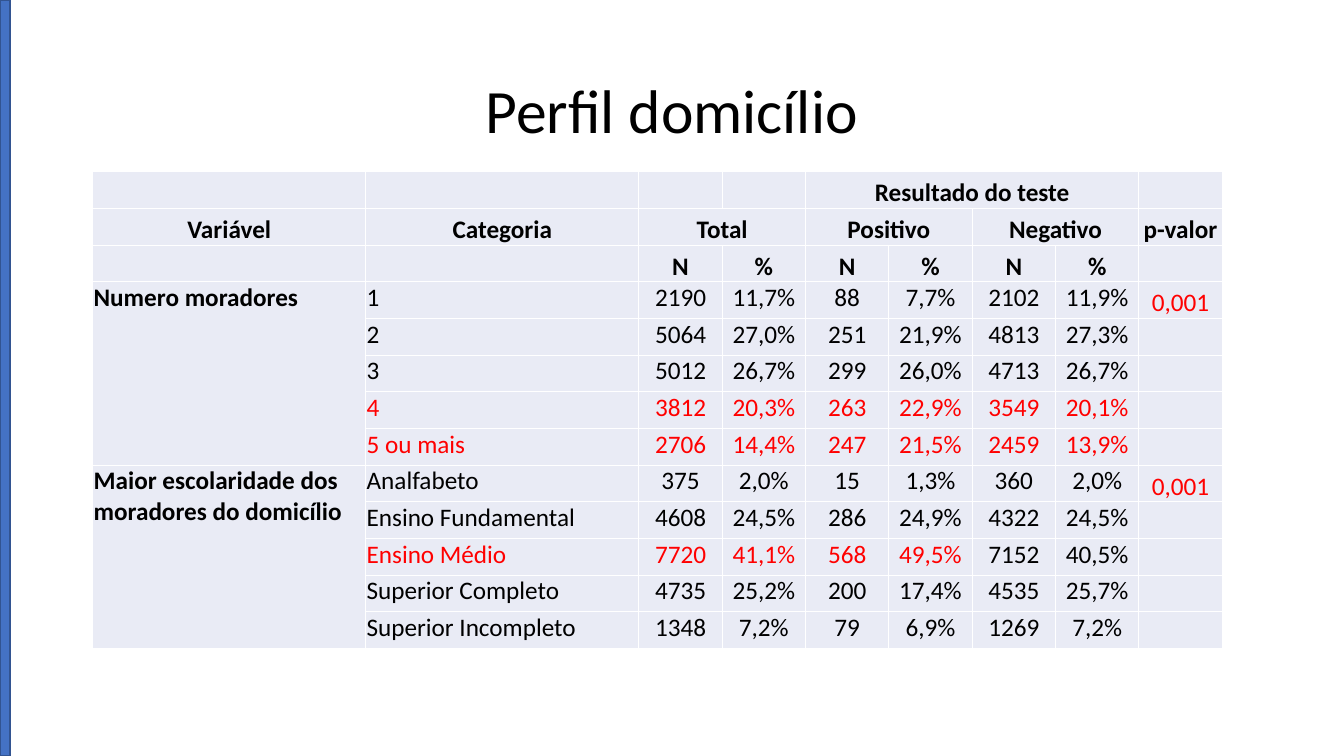
from lxml import etree
from pptx import Presentation
from pptx.dml.color import RGBColor
from pptx.enum.shapes import MSO_SHAPE
from pptx.enum.text import MSO_ANCHOR, PP_ALIGN
from pptx.oxml.ns import qn
from pptx.util import Cm, Pt

LEFT, CENTER = PP_ALIGN.LEFT, PP_ALIGN.CENTER
TOP, MIDDLE, BOTTOM = MSO_ANCHOR.TOP, MSO_ANCHOR.MIDDLE, MSO_ANCHOR.BOTTOM
BLACK = RGBColor(0x00, 0x00, 0x00)
RED = RGBColor(0xFF, 0x00, 0x00)
CELL = RGBColor(0xE9, 0xEB, 0xF5)
BLUE = RGBColor(0x44, 0x72, 0xC4)
DARK_BLUE = RGBColor(0x32, 0x54, 0x91)
FONT = "Calibri"

TITLE = "Perfil domicílio"
HEADER = [
    ["", "", "", "", "Resultado do teste", "", "", "", ""],
    ["Variável", "Categoria", "Total", "", "Positivo", "", "Negativo", "", "p-valor"],
    ["", "", "N", "%", "N", "%", "N", "%", ""],
]
# (variable, p-value, [(category, six values, how many of these seven cells are red)])
GROUPS = [
    ("Numero moradores", "0,001", [
        ("1", ["2190", "11,7%", "88", "7,7%", "2102", "11,9%"], 0),
        ("2", ["5064", "27,0%", "251", "21,9%", "4813", "27,3%"], 0),
        ("3", ["5012", "26,7%", "299", "26,0%", "4713", "26,7%"], 0),
        ("4", ["3812", "20,3%", "263", "22,9%", "3549", "20,1%"], 7),
        ("5 ou mais", ["2706", "14,4%", "247", "21,5%", "2459", "13,9%"], 7),
    ]),
    ("Maior escolaridade dos moradores do domicílio", "0,001", [
        ("Analfabeto", ["375", "2,0%", "15", "1,3%", "360", "2,0%"], 0),
        ("Ensino Fundamental", ["4608", "24,5%", "286", "24,9%", "4322", "24,5%"], 0),
        ("Ensino Médio", ["7720", "41,1%", "568", "49,5%", "7152", "40,5%"], 5),
        ("Superior Completo", ["4735", "25,2%", "200", "17,4%", "4535", "25,7%"], 0),
        ("Superior Incompleto", ["1348", "7,2%", "79", "6,9%", "1269", "7,2%"], 0),
    ]),
]
HEADER_SPANS = [(0, 4, 7), (1, 2, 3), (1, 4, 5), (1, 6, 7)]  # row, first and last column
COL_WIDTHS = [6.88] * 2 + [2.1] * 7
ROW_HEIGHT = 0.924


def format_text(p, size, color=BLACK, bold=False, align=CENTER):
    p.alignment = align
    for r in p.runs:
        r.font.name, r.font.size, r.font.bold = FONT, Pt(size), bold
        r.font.color.rgb = color


def add_borders(cell):
    tc_pr = cell._tc.get_or_add_tcPr()
    for side in ("a:lnL", "a:lnR", "a:lnT", "a:lnB"):
        ln = etree.SubElement(tc_pr, qn(side), w=str(Pt(1)))
        fill = etree.SubElement(ln, qn("a:solidFill"))
        etree.SubElement(fill, qn("a:srgbClr"), val="FFFFFF")


def set_cell(cell, text, color=BLACK, bold=False, align=CENTER, anchor=TOP):
    cell.text = text
    cell.margin_left = cell.margin_right = cell.margin_top = Cm(0.02)
    cell.margin_bottom = 0
    cell.vertical_anchor = anchor
    add_borders(cell)
    cell.fill.solid()
    cell.fill.fore_color.rgb = CELL
    format_text(cell.text_frame.paragraphs[0], 18, color, bold, align)


def fill_table(table):
    for row, texts in enumerate(HEADER):
        for col, text in enumerate(texts):
            set_cell(table.cell(row, col), text, bold=True, anchor=BOTTOM)
    for row, first, last in HEADER_SPANS:
        table.cell(row, first).merge(table.cell(row, last))

    row = len(HEADER)
    for variable, p_value, categories in GROUPS:
        start = row
        for category, values, red_count in categories:
            is_first = row == start
            set_cell(table.cell(row, 0), variable if is_first else "", bold=True, align=LEFT)
            for i, text in enumerate([category] + values):
                set_cell(table.cell(row, i + 1), text, RED if i < red_count else BLACK,
                         align=CENTER if i else LEFT)
            set_cell(table.cell(row, 8), p_value if is_first else "", RED, anchor=BOTTOM)
            row += 1
        table.cell(start, 0).merge(table.cell(row - 1, 0))


def main():
    prs = Presentation()
    prs.slide_width, prs.slide_height = Cm(33.87), Cm(19.05)
    s = prs.slides.add_slide(prs.slide_layouts[5])

    title = s.shapes.title
    title.left, title.top, title.width, title.height = Cm(2.33), Cm(1.01), Cm(29.21), Cm(3.68)
    tf = title.text_frame
    tf.text = TITLE
    tf.vertical_anchor = MIDDLE
    tf.paragraphs[0].line_spacing = 0.9
    format_text(tf.paragraphs[0], 44)

    row_count = len(HEADER) + sum(len(categories) for _, _, categories in GROUPS)
    table = s.shapes.add_table(row_count, len(COL_WIDTHS), Cm(2.34), Cm(4.33),
                               Cm(sum(COL_WIDTHS)), Cm(ROW_HEIGHT * row_count)).table
    table.first_row = table.horz_banding = False
    for column, width in zip(table.columns, COL_WIDTHS):
        column.width = Cm(width)
    fill_table(table)

    bar = s.shapes.add_shape(MSO_SHAPE.RECTANGLE, 0, 0, Cm(0.25), prs.slide_height)
    bar.shadow.inherit = False
    bar.fill.solid()
    bar.fill.fore_color.rgb = BLUE
    bar.line.color.rgb = DARK_BLUE
    bar.line.width = Pt(1)

    prs.save("out.pptx")


if __name__ == "__main__":
    main()
